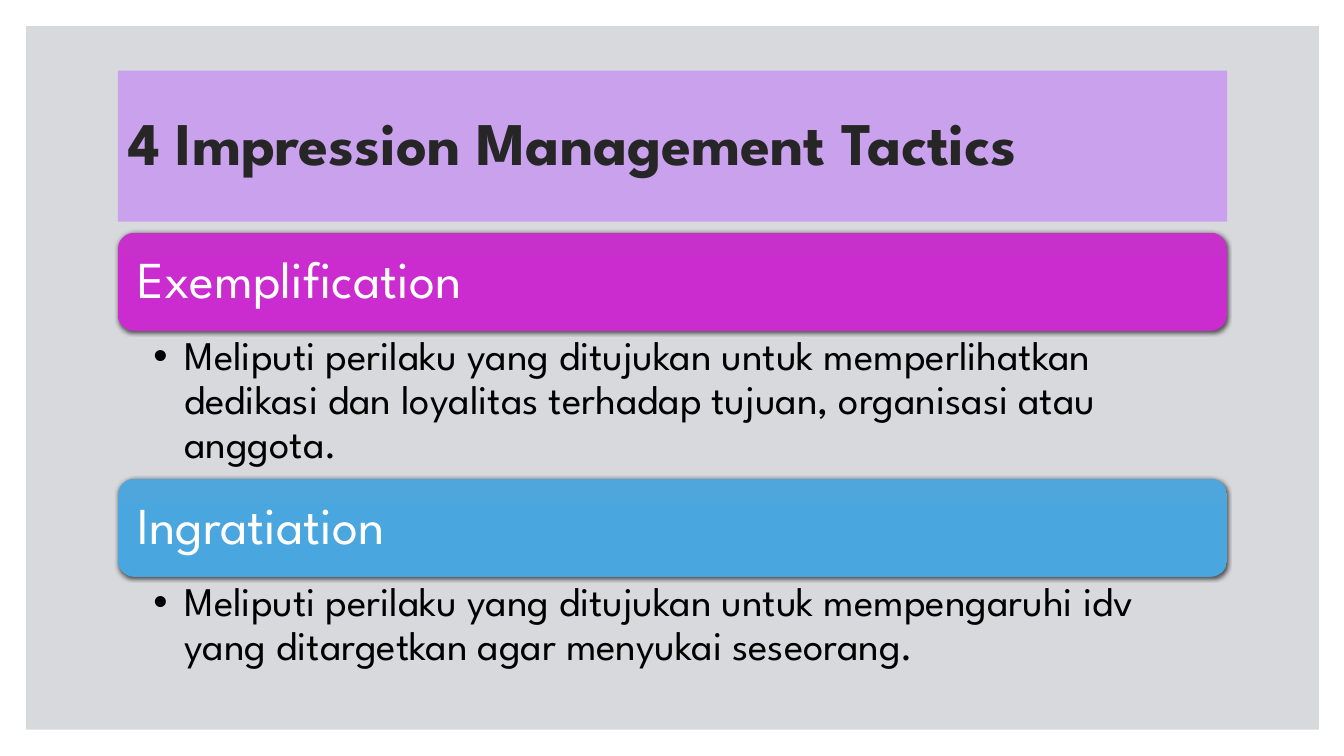
"""Build the slide on impression management tactics."""
from copy import deepcopy

from lxml.etree import SubElement
from pptx import Presentation
from pptx.dml.color import RGBColor
from pptx.enum.shapes import MSO_SHAPE
from pptx.enum.text import MSO_ANCHOR as Anchor, MSO_AUTO_SIZE as AutoSize, PP_ALIGN as Align
from pptx.oxml.ns import qn
from pptx.util import Inches, Pt

TITLE = "4 Impression Management Tactics"
TACTICS = [
    ("Exemplification", "exemplification",
     "Meliputi perilaku yang ditujukan untuk memperlihatkan dedikasi dan "
     "loyalitas terhadap tujuan, organisasi atau anggota."),
    ("Ingratiation", "ingratiation",
     "Meliputi perilaku yang ditujukan untuk mempengaruhi idv yang "
     "ditargetkan agar menyukai seseorang."),
]
COLORS = {"panel": "D8D9DC", "title_fill": "CAA1EC", "title": "262626",
          "header": "FFFFFF", "body": "000000", "shadow": "000000"}
GRADIENTS = {"exemplification": ["C830CC", "CB2CCF", "CA2CCE"],
             "ingratiation": ["4EA6DC", "4AA6DF", "4AA5DE"]}
FONT = "League Spartan"
LEFT, WIDTH = 1.17, 11
LIST_TOP, HEADER_HEIGHT, BODY_HEIGHT = 2.31, 0.97, 1.47
TITLE_FORMAT = {"size": Pt(43.2), "bold": True}
HEADER_FORMAT = {"size": Pt(37), "bold": False}
BODY_FORMAT = {"size": Pt(29), "bold": False}


def color(name):
    return RGBColor.from_string(COLORS[name])


def place(shape, *box):
    for name, value in zip(("left", "top", "width", "height"), box):
        setattr(shape, name, Inches(value))


def fill_solid(shape, name):
    shape.fill.solid()
    shape.fill.fore_color.rgb = color(name)


def write(shape, text, font_format, color_name, anchor, margins):
    frame = shape.text_frame
    frame.text = text
    frame_format = {"word_wrap": True, "auto_size": AutoSize.NONE, "vertical_anchor": anchor}
    sides = ("margin_left", "margin_top", "margin_right", "margin_bottom")
    frame_format.update(zip(sides, map(Inches, margins)))
    for name, value in frame_format.items():
        setattr(frame, name, value)
    paragraph = frame.paragraphs[0]
    paragraph_format = {"alignment": Align.LEFT, "line_spacing": 0.9, "space_before": Pt(0)}
    for name, value in paragraph_format.items():
        setattr(paragraph, name, value)
    font = paragraph.runs[0].font
    for name, value in {"name": FONT, **font_format}.items():
        setattr(font, name, value)
    font.color.rgb = color(color_name)
    return paragraph


def add_bullet(paragraph):
    paragraph.level = 1
    properties = paragraph._p.get_or_add_pPr()
    properties.set("marL", str(Inches(0.31)))
    properties.set("indent", str(-Inches(0.31)))
    SubElement(properties, qn("a:buFont"), typeface="Arial")
    SubElement(properties, qn("a:buChar"), char="•")


def fill_gradient(shape, hex_colors):
    shape.fill.gradient()
    shape.fill.gradient_angle = 270
    stop_list = shape._element.spPr.find(qn("a:gradFill")).find(qn("a:gsLst"))
    stop_list.insert(1, deepcopy(stop_list[0]))
    for index, (stop, value) in enumerate(zip(shape.fill.gradient_stops, hex_colors)):
        stop.position = index / 2
        stop.color.rgb = RGBColor.from_string(value)


def add_shadow(shape):
    shape.shadow.inherit = False
    effects = shape._element.spPr.find(qn("a:effectLst"))
    shadow = SubElement(effects, qn("a:outerShdw"), blurRad=str(Pt(3)), dist=str(Pt(1)),
                        dir="5400000", algn="ctr", rotWithShape="0")
    tint = SubElement(shadow, qn("a:srgbClr"), val=COLORS["shadow"])
    SubElement(tint, qn("a:alpha"), val="63000")


def add_panel(slide):
    panel = slide.shapes.add_shape(MSO_SHAPE.RECTANGLE, 0, 0, 0, 0)
    place(panel, 0.26, 0.26, 12.82, 6.98)
    fill_solid(panel, "panel")
    panel.line.fill.background()
    panel.shadow.inherit = False
    slide.shapes._spTree.insert(2, panel._element)


def add_tactic(slide, body, top, header_text, gradient, description):
    header = slide.shapes.add_shape(MSO_SHAPE.ROUNDED_RECTANGLE, 0, 0, 0, 0)
    place(header, LEFT, top, WIDTH, HEADER_HEIGHT)
    fill_gradient(header, GRADIENTS[gradient])
    header.line.fill.background()
    add_shadow(header)
    write(header, header_text, HEADER_FORMAT, "header", Anchor.MIDDLE, [0.15] * 4)
    place(body, LEFT, top + HEADER_HEIGHT, WIDTH, BODY_HEIGHT)
    add_bullet(write(body, description, BODY_FORMAT, "body", Anchor.TOP,
                     (0.35, 0.05, 0.29, 0.05)))


def main():
    presentation = Presentation()
    presentation.slide_width, presentation.slide_height = Inches(13.33), Inches(7.5)
    slide = presentation.slides.add_slide(presentation.slide_layouts.get_by_name("Two Content"))
    add_panel(slide)
    title = slide.shapes.title
    place(title, LEFT, 0.7, WIDTH, 1.5)
    fill_solid(title, "title_fill")
    write(title, TITLE, TITLE_FORMAT, "title", Anchor.MIDDLE, (0.1, 0.05, 0.1, 0.05))
    bodies = [slide.placeholders[1], slide.placeholders[2]]
    for index, (body, tactic) in enumerate(zip(bodies, TACTICS)):
        add_tactic(slide, body, LIST_TOP + index * (HEADER_HEIGHT + BODY_HEIGHT), *tactic)
    presentation.save("out.pptx")


if __name__ == "__main__":
    main()
